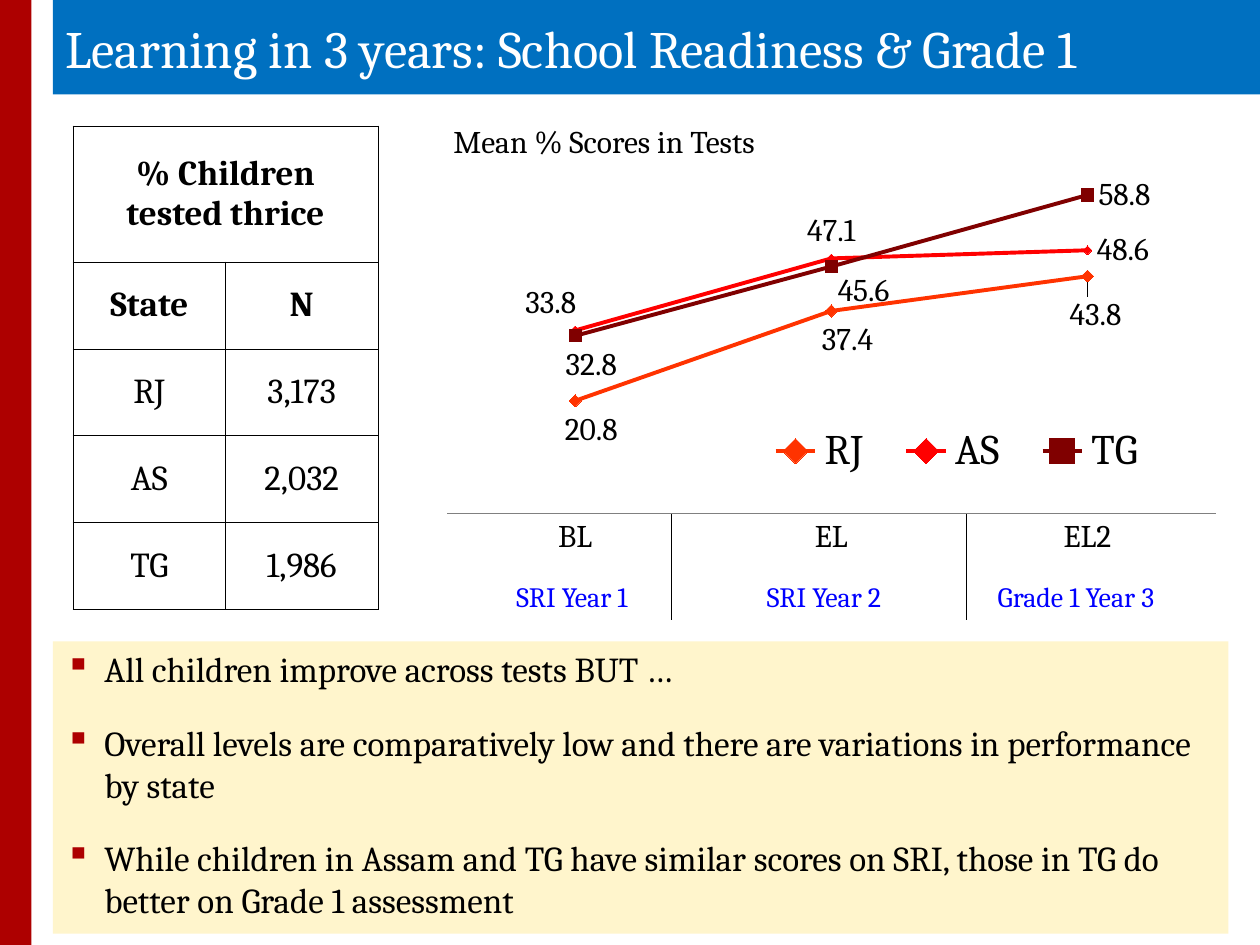
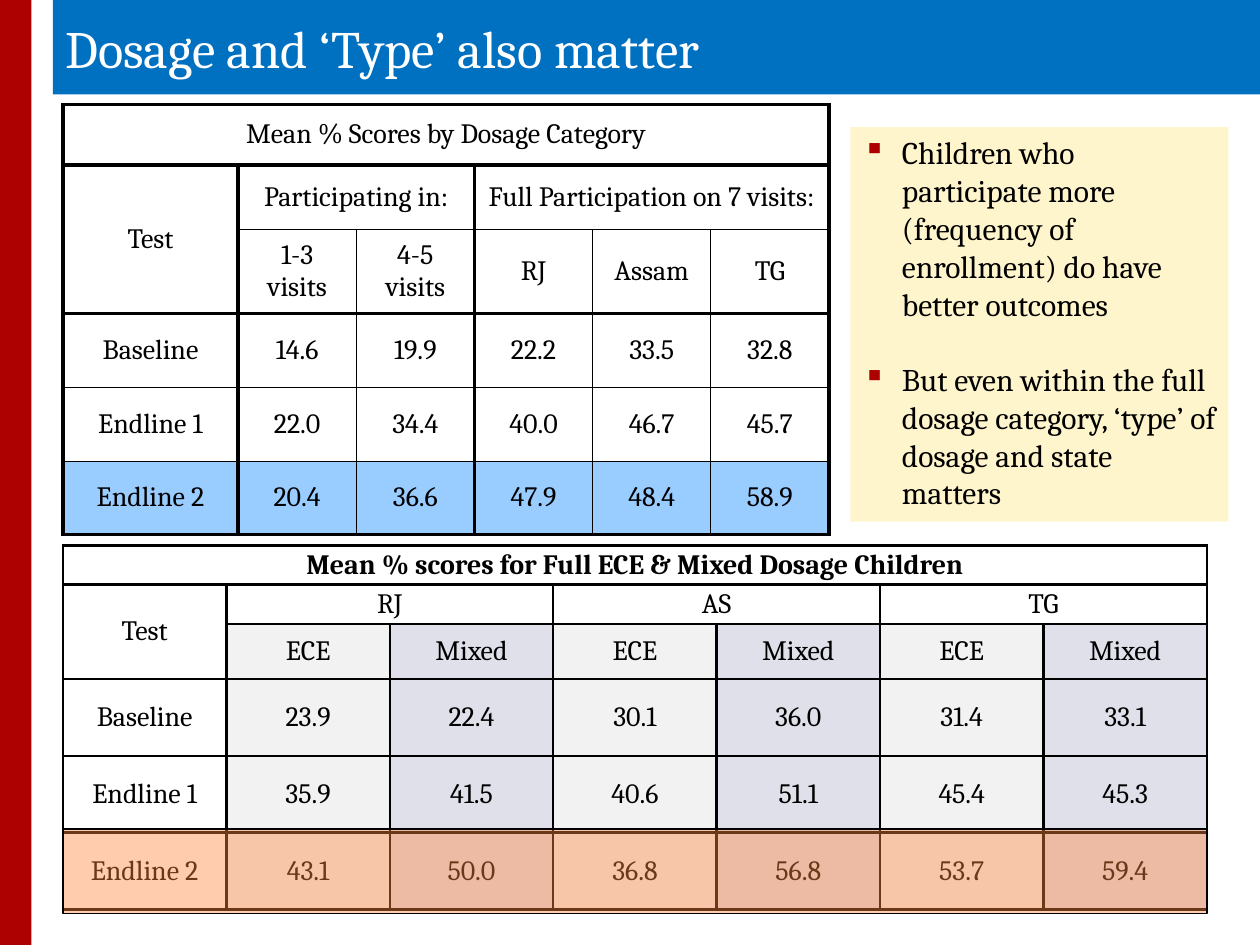
from dataclasses import dataclass

from lxml import etree
from pptx import Presentation
from pptx import util as u
from pptx.chart import data
from pptx.dml import color
from pptx.enum import chart as charts
from pptx.enum import shapes, text
from pptx.oxml import ns


@dataclass(frozen=True)
class Theme:
    font: str = "Cambria"
    title_size: int = 30
    legend_size: int = 24
    large: int = 20
    medium: int = 18
    small: int = 16
    black: str = "000000"
    white: str = "FFFFFF"
    gray: str = "808080"
    red: str = "AD0000"
    blue: str = "0070C0"
    period_blue: str = "0000FF"
    cream: str = "FFF5CC"
    sky: str = "99CCFF"
    pale_gray: str = "F2F2F2"
    lavender: str = "E0E0EB"
    orange: str = "FF8840"
    rajasthan: str = "FF3300"
    assam: str = "FF0000"
    telangana: str = "800000"


THEME = Theme()


@dataclass(frozen=True)
class Box:
    left: float
    top: float
    width: float
    height: float

    def inside(self, left, top, width, height):
        return Box(self.left + left, self.top + top, width, height)

    def inches(self):
        return [u.Inches(side) for side in (self.left, self.top, self.width, self.height)]


SIDE_BAND = Box(0, 0, 0.25, 7.5)
TITLE_BAND = Box(0.42, 0, 9.58, 0.75)


def rgb(code):
    return color.RGBColor.from_string(code)


def add_child(parent, tag, **attributes):
    return etree.SubElement(parent, ns.qn(tag), attributes)


def format_font(font, size, code=THEME.black, bold=False):
    font.name = THEME.font
    font.size = u.Pt(size)
    font.bold = bold
    font.color.rgb = rgb(code)


def write(frame, words, size, code=THEME.black, bold=False, align=text.PP_ALIGN.LEFT):
    frame.word_wrap = True
    frame.text = words
    for para in frame.paragraphs:
        para.alignment = align
        for span in para.runs:
            format_font(span.font, size, code, bold)


def add_rectangle(page, box, fill):
    rectangle = page.shapes.add_shape(shapes.MSO_SHAPE.RECTANGLE, *box.inches())
    rectangle.shadow.inherit = False
    rectangle.fill.solid()
    rectangle.fill.fore_color.rgb = rgb(fill)
    rectangle.line.fill.background()
    return rectangle


def add_text(page, box, words, size, code=THEME.black, align=text.PP_ALIGN.LEFT):
    frame = page.shapes.add_textbox(*box.inches()).text_frame
    write(frame, words, size, code, align=align)


def add_page(deck, title):
    page = deck.slides.add_slide(deck.slide_layouts[6])
    add_rectangle(page, SIDE_BAND, THEME.red)
    frame = add_rectangle(page, TITLE_BAND, THEME.blue).text_frame
    frame.vertical_anchor = text.MSO_ANCHOR.MIDDLE
    write(frame, title, THEME.title_size, THEME.white)
    return page


def add_findings(page, box, findings, size, gap):
    frame = add_rectangle(page, box, THEME.cream).text_frame
    frame.vertical_anchor = text.MSO_ANCHOR.TOP
    write(frame, "\n".join(findings), size)
    for number, para in enumerate(frame.paragraphs):
        para.space_before = u.Pt(gap if number else 0)
        properties = para._p.get_or_add_pPr()
        properties.set("marL", str(u.Inches(0.31)))
        properties.set("indent", str(-u.Inches(0.31)))
        add_child(add_child(properties, "a:buClr"), "a:srgbClr", val=THEME.red)
        add_child(properties, "a:buChar", char="▪")


def draw_borders(cell, weights):
    properties = cell._tc.get_or_add_tcPr()
    for position, (side, weight) in enumerate(weights.items()):
        line = etree.Element(ns.qn(f"a:ln{side}"), w=str(u.Pt(weight)))
        add_child(add_child(line, "a:solidFill"), "a:srgbClr", val=THEME.black)
        properties.insert(position, line)


def add_grid(page, box, rows, heights, first_width, size, merges, thin, thick=0,
             thick_rows=(), thick_columns=(), bold_rows=(), fill_of=lambda row, column: None):
    count = len(rows[0])
    table = page.shapes.add_table(len(rows), count, *box.inches()).table
    table.first_row = table.horz_banding = False
    other_width = (box.width - first_width) / (count - 1)
    for number, column in enumerate(table.columns):
        column.width = u.Inches(other_width if number else first_width)
    for row, height in zip(table.rows, heights):
        row.height = u.Inches(height)
    for start, end in merges:
        table.cell(*start).merge(table.cell(*end))

    def row_weight(edge):
        return thick if edge in thick_rows else thin

    def column_weight(edge):
        return thick if edge in thick_columns else thin

    for row, values in enumerate(rows):
        for column, value in enumerate(values):
            cell = table.cell(row, column)
            if cell.is_spanned:
                continue
            cell.margin_left = cell.margin_right = cell.margin_top = cell.margin_bottom = 0
            cell.vertical_anchor = text.MSO_ANCHOR.MIDDLE
            write(cell.text_frame, value, size, bold=row in bold_rows,
                  align=text.PP_ALIGN.CENTER)
            fill = fill_of(row, column)
            if fill:
                cell.fill.solid()
                cell.fill.fore_color.rgb = rgb(fill)
            else:
                cell.fill.background()
            height = cell.span_height if cell.is_merge_origin else 1
            width = cell.span_width if cell.is_merge_origin else 1
            draw_borders(cell, {"L": column_weight(column), "R": column_weight(column + width),
                                "T": row_weight(row), "B": row_weight(row + height)})


def set_layout(parent, position, **settings):
    for old in parent.findall(ns.qn("c:layout")):
        parent.remove(old)
    layout = etree.Element(ns.qn("c:layout"))
    manual = add_child(layout, "c:manualLayout")
    for name, value in settings.items():
        add_child(manual, f"c:{name}", val=str(value))
    parent.insert(position, layout)


def add_score_series(series, code, marker, marker_size, labels):
    series.smooth = False
    series.format.line.width = u.Pt(2.25)
    series.format.line.color.rgb = rgb(code)
    series.marker.style = marker
    series.marker.size = marker_size
    series.marker.format.fill.solid()
    series.marker.format.fill.fore_color.rgb = rgb(code)
    series.marker.format.line.color.rgb = rgb(code)
    series.data_labels.show_value = True
    series.data_labels.number_format = "0.0"
    series.data_labels.number_format_is_linked = False
    for number, (position, x, y) in enumerate(labels):
        series.points[number].data_label.position = position
    for label, (position, x, y) in zip(series._element.xpath("c:dLbls/c:dLbl"), labels):
        set_layout(label, 1, x=x, y=y)


def add_score_chart(page, box):
    chart_data = data.CategoryChartData(number_format="0.0")
    chart_data.categories = ["BL", "EL", "EL2"]
    above, below, right = (charts.XL_LABEL_POSITION.ABOVE, charts.XL_LABEL_POSITION.BELOW,
                           charts.XL_LABEL_POSITION.RIGHT)
    diamond, square = charts.XL_MARKER_STYLE.DIAMOND, charts.XL_MARKER_STYLE.SQUARE
    states = [
        ("RJ", [20.8, 37.4, 43.8], THEME.rajasthan, diamond, 7,
         [(below, 0.02, 0), (below, 0.02, 0), (below, 0.01, 0.02)]),
        ("AS", [33.8, 47.1, 48.6], THEME.assam, diamond, 5,
         [(above, -0.03, 0), (above, 0, 0), (right, 0, 0)]),
        ("TG", [32.8, 45.6, 58.8], THEME.telangana, square, 7,
         [(below, 0.02, 0), (below, 0.04, -0.01), (right, 0, 0)]),
    ]
    for name, scores, *_ in states:
        chart_data.add_series(name, scores)
    chart = page.shapes.add_chart(charts.XL_CHART_TYPE.LINE_MARKERS,
                                  *box.inside(0, 0, box.width, 3.67).inches(), chart_data).chart
    chart.has_title = False
    format_font(chart.font, THEME.medium)
    chart.plots[0].vary_by_categories = False
    for series, (_, _, *style) in zip(chart.plots[0].series, states):
        add_score_series(series, *style)
    scores_axis, tests_axis = chart.value_axis, chart.category_axis
    scores_axis.minimum_scale, scores_axis.maximum_scale = 0, 70
    scores_axis.has_major_gridlines = scores_axis.visible = False
    tests_axis.major_tick_mark = charts.XL_TICK_MARK.NONE
    tests_axis.format.line.color.rgb = rgb(THEME.gray)
    chart.has_legend = True
    chart.legend.position = charts.XL_LEGEND_POSITION.BOTTOM
    chart.legend.include_in_layout = False
    format_font(chart.legend.font, THEME.legend_size)
    set_layout(chart.legend._element, 1, xMode="edge", yMode="edge", x=0.39, y=0.66, w=0.52, h=0.13)
    set_layout(chart._chartSpace.chart.plotArea, 0, layoutTarget="inner", xMode="edge",
               yMode="edge", x=0.02, y=0.04, w=0.95, h=0.82)

    add_text(page, box.inside(0.08, 0, 4.75, 0.4), "Mean % Scores in Tests", THEME.medium)
    for number, period in enumerate(["SRI Year 1", "SRI Year 2", "Grade 1 Year 3"]):
        add_text(page, box.inside(0.33 + 2 * number, 3.63, 1.58, 0.37), period, THEME.small,
                 THEME.period_blue, text.PP_ALIGN.CENTER)
    for offset in (1.91, 4.25):
        x = u.Inches(box.left + offset)
        divider = page.shapes.add_connector(shapes.MSO_CONNECTOR.STRAIGHT,
                                            x, u.Inches(box.top + 3.16), x, u.Inches(box.top + 4))
        divider.line.color.rgb = rgb(THEME.black)
        divider.line.width = u.Pt(1)
        add_child(divider._element.spPr, "a:effectLst")


def add_sample_table(page, box):
    rows = [["% Children\ntested thrice", ""], ["State", "N"],
            ["RJ", "3,173"], ["AS", "2,032"], ["TG", "1,986"]]
    add_grid(page, box, rows, [1.08] + [0.69] * 4, box.width / 2, THEME.large,
             [((0, 0), (0, 1))], thin=0.5, bold_rows=(0, 1))


def add_dosage_table(page, box):
    rows = [
        ["Mean % Scores by Dosage Category", "", "", "", "", ""],
        ["Test", "Participating in:", "", "Full Participation on 7 visits:", "", ""],
        ["", "1-3\nvisits", "4-5\nvisits", "RJ", "Assam", "TG"],
        ["Baseline", "14.6", "19.9", "22.2", "33.5", "32.8"],
        ["Endline 1", "22.0", "34.4", "40.0", "46.7", "45.7"],
        ["Endline 2", "20.4", "36.6", "47.9", "48.4", "58.9"],
    ]
    merges = [((0, 0), (0, 5)), ((1, 0), (2, 0)), ((1, 1), (1, 2)), ((1, 3), (1, 5))]
    add_grid(page, box, rows, [0.48, 0.51, 0.67] + [0.585] * 3, 1.39, THEME.small, merges,
             thin=0.5, thick=2.25, thick_rows=(0, 1, 3, 6), thick_columns=(0, 1, 3, 6),
             fill_of=lambda row, column: THEME.sky if row == 5 else None)


def add_mixed_table(page, box):
    rows = [
        ["Mean % scores for Full ECE & Mixed Dosage Children"] + [""] * 6,
        ["Test", "RJ", "", "AS", "", "TG", ""],
        [""] + ["ECE", "Mixed"] * 3,
        ["Baseline", "23.9", "22.4", "30.1", "36.0", "31.4", "33.1"],
        ["Endline 1", "35.9", "41.5", "40.6", "51.1", "45.4", "45.3"],
        ["Endline 2", "43.1", "50.0", "36.8", "56.8", "53.7", "59.4"],
    ]
    merges = [((0, 0), (0, 6)), ((1, 0), (2, 0))]
    merges += [((1, column), (1, column + 1)) for column in (1, 3, 5)]

    def fill_of(row, column):
        if row < 2 or column == 0:
            return None
        return THEME.pale_gray if column % 2 else THEME.lavender

    add_grid(page, box, rows, [0.31, 0.31, 0.44] + [0.61] * 3, box.width / 7, THEME.small,
             merges, thin=1.5, thick=2.25, thick_rows=(5, 6), bold_rows=(0,), fill_of=fill_of)
    highlight = add_rectangle(page, box.inside(0, 2.25, box.width, 0.67), THEME.orange)
    highlight.line.color.rgb = rgb(THEME.black)
    highlight.line.width = u.Pt(1)
    for code in highlight._element.spPr.xpath("a:solidFill/a:srgbClr"):
        add_child(code, "a:alpha", val="42000")


def build_learning_page(deck):
    page = add_page(deck, "Learning in 3 years: School Readiness & Grade 1")
    add_findings(page, Box(0.42, 5.09, 9.33, 2.32), [
        "All children improve across tests BUT …",
        "Overall levels are comparatively low and there are variations in performance by state",
        "While children in Assam and TG have similar scores on SRI, "
        "those in TG do better on Grade 1 assessment",
    ], THEME.large, gap=18)
    add_sample_table(page, Box(0.58, 1, 2.42, 3.83))
    add_score_chart(page, Box(3.42, 0.92, 6.42, 4))


def build_dosage_page(deck):
    page = add_page(deck, "Dosage and ‘Type’ also matter")
    add_dosage_table(page, Box(0.5, 0.83, 6.08, 3.42))
    add_mixed_table(page, Box(0.5, 4.33, 9.08, 2.89))
    add_findings(page, Box(6.75, 1.01, 3, 3.13), [
        "Children who participate more (frequency of enrollment) do have better outcomes",
        "But even within the full dosage category, ‘type’ of dosage and state matters",
    ], THEME.medium, gap=21.5)


def main():
    deck = Presentation()
    deck.slide_width, deck.slide_height = u.Inches(10), u.Inches(7.5)
    build_learning_page(deck)
    build_dosage_page(deck)
    deck.save("out.pptx")


if __name__ == "__main__":
    main()
